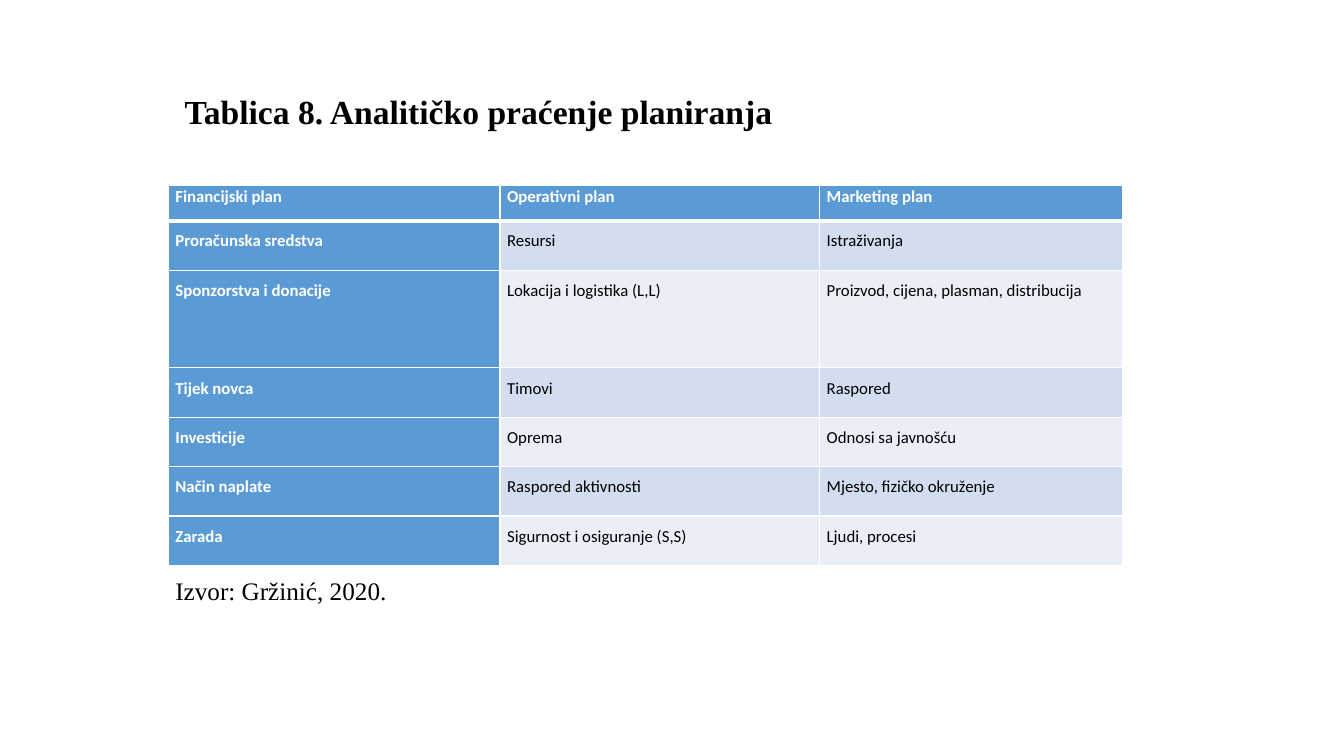
from dataclasses import dataclass

from lxml.etree import SubElement
from pptx import Presentation
from pptx.dml.color import RGBColor
from pptx.enum.text import MSO_ANCHOR as Anchor, PP_ALIGN as Align
from pptx.oxml.ns import qn
from pptx.util import Inches, Pt


@dataclass(frozen=True)
class Theme:
    heading_font: str = "Times New Roman"
    table_font: str = "Calibri"
    title_size: int = 24
    source_size: int = 18
    table_size: int = 12
    black: str = "000000"
    white: str = "FFFFFF"
    blue: str = "5B9BD5"
    bands: tuple = ("D2DEEF", "EAEFF7")
    thin: int = 1
    thick: int = 3


PLAN_ROWS = [
    ("Financijski plan", "Operativni plan", "Marketing plan"),
    ("Proračunska sredstva", "Resursi", "Istraživanja"),
    ("Sponzorstva i donacije", "Lokacija i logistika (L,L)", "Proizvod, cijena, plasman, distribucija"),
    ("Tijek novca", "Timovi", "Raspored"),
    ("Investicije", "Oprema", "Odnosi sa javnošću"),
    ("Način naplate", "Raspored aktivnosti", "Mjesto, fizičko okruženje"),
    ("Zarada", "Sigurnost i osiguranje (S,S)", "Ljudi, procesi"),
]
COLUMN_WIDTHS = [3.29, 3.17, 3]
ROW_HEIGHTS = [0.35, 0.49, 0.97, 0.49, 0.49, 0.49, 0.49]


def write_text(frame, text, *, font, size, color, bold=False, align=Align.LEFT, spacing=1.0):
    para = frame.paragraphs[0]
    para.alignment = align
    para.line_spacing = spacing
    span = para.add_run()
    span.text = text
    span.font.name = font
    span.font.size = Pt(size)
    span.font.bold = bold
    span.font.color.rgb = RGBColor.from_string(color)


class SlideBuilder:
    def __init__(self, slide, theme):
        self.slide = slide
        self.theme = theme

    def title(self, text, left, top, width, height):
        box = self.slide.shapes.title
        box.left, box.top = Inches(left), Inches(top)
        box.width, box.height = Inches(width), Inches(height)
        box.text_frame.word_wrap = False
        box.text_frame.vertical_anchor = Anchor.MIDDLE
        write_text(box.text_frame, text, font=self.theme.heading_font,
                   size=self.theme.title_size, color=self.theme.black, bold=True)

    def source_note(self, text, left, top, width, height):
        box = self.slide.shapes.add_textbox(Inches(left), Inches(top), Inches(width), Inches(height))
        box.text_frame.word_wrap = False
        write_text(box.text_frame, text, font=self.theme.heading_font,
                   size=self.theme.source_size, color=self.theme.black)

    def table(self, rows, widths, heights, left, top):
        frame = self.slide.shapes.add_table(
            len(rows), len(widths), Inches(left), Inches(top),
            Inches(sum(widths)), Inches(sum(heights)))
        grid = frame.table
        grid.first_col = True
        for column, width in zip(grid.columns, widths):
            column.width = Inches(width)
        for row, height in zip(grid.rows, heights):
            row.height = Inches(height)
        for row_index, texts in enumerate(rows):
            for column_index, text in enumerate(texts):
                self.cell(grid.cell(row_index, column_index), text, row_index, column_index)

    def cell(self, cell, text, row_index, column_index):
        theme = self.theme
        is_header = row_index == 0
        is_label = is_header or column_index == 0
        cell.margin_left = cell.margin_right = Inches(0.07)
        cell.margin_top = cell.margin_bottom = 0
        self.borders(cell, top=theme.thick if row_index == 1 else theme.thin,
                     bottom=theme.thick if is_header else theme.thin)
        cell.fill.solid()
        fill = theme.blue if is_label else theme.bands[(row_index - 1) % 2]
        cell.fill.fore_color.rgb = RGBColor.from_string(fill)
        write_text(cell.text_frame, text, font=theme.table_font, size=theme.table_size,
                   color=theme.white if is_label else theme.black, bold=is_label,
                   align=Align.JUSTIFY if is_label else Align.LEFT,
                   spacing=1.07 if is_header else 1.5)

    def borders(self, cell, top, bottom):
        properties = cell._tc.get_or_add_tcPr()
        thin = self.theme.thin
        for side, weight in (("L", thin), ("R", thin), ("T", top), ("B", bottom)):
            line = SubElement(properties, qn(f"a:ln{side}"), w=str(Pt(weight)))
            paint = SubElement(line, qn("a:solidFill"))
            SubElement(paint, qn("a:srgbClr"), val=self.theme.white)


def main():
    deck = Presentation()
    deck.slide_width, deck.slide_height = Inches(13.33), Inches(7.5)
    title_only = deck.slide_layouts[5]
    page = SlideBuilder(deck.slides.add_slide(title_only), Theme())
    page.table(PLAN_ROWS, COLUMN_WIDTHS, ROW_HEIGHTS, 1.67, 1.84)
    page.title("Tablica 8. Analitičko praćenje planiranja", 1.73, 0.85, 6.09, 0.5)
    page.source_note("Izvor: Gržinić, 2020.", 1.64, 5.66, 2.32, 0.4)
    deck.save("out.pptx")


if __name__ == "__main__":
    main()
